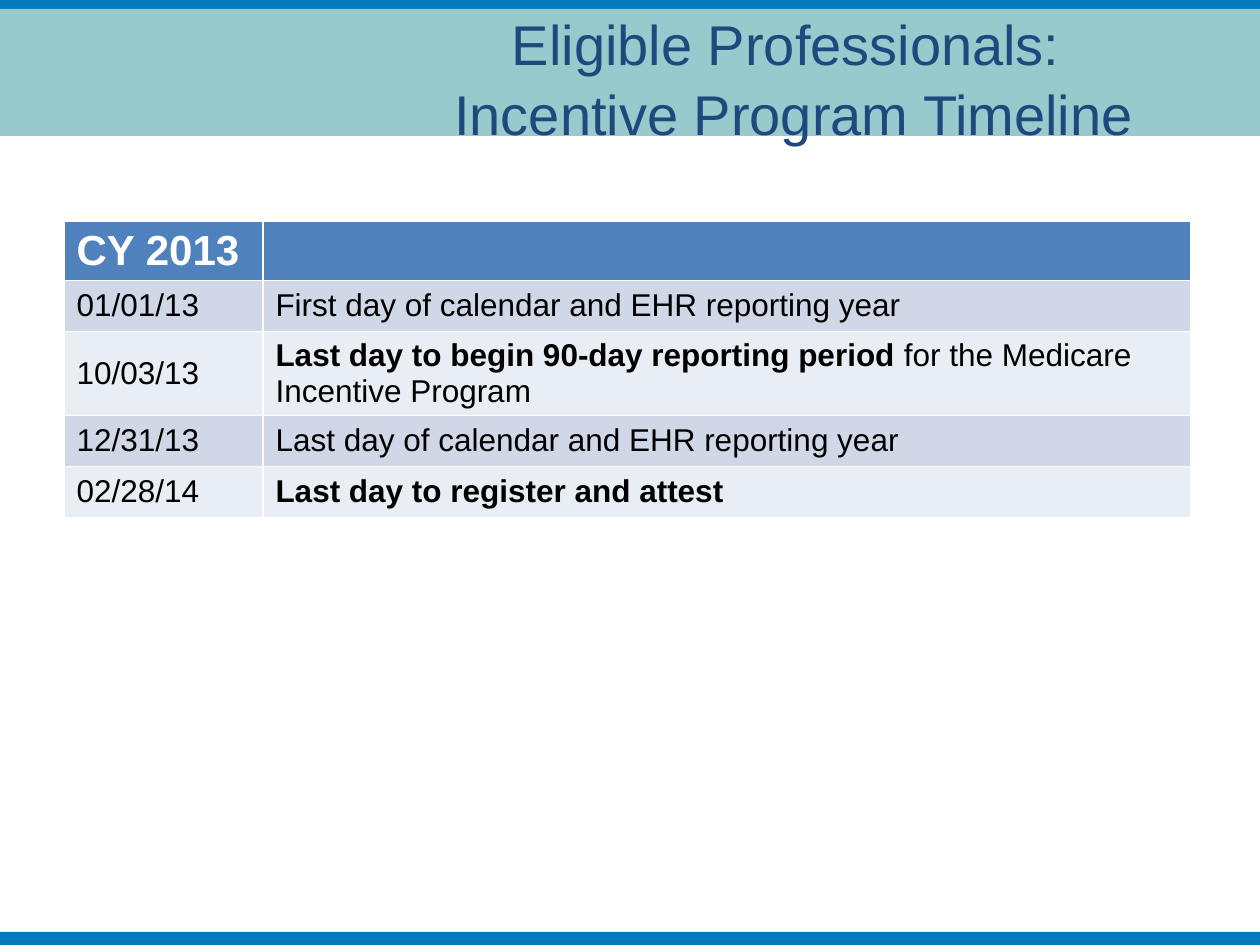
from pptx import Presentation
from pptx import util as u
from pptx.dml.color import RGBColor
from pptx.enum import shapes, text

PX = u.Inches(1) // 126
HUES = {
    "bar": "027ABB", "band": "98C9CD", "title": "1F497D", "head": "4F81BD",
    "odd": "D0D8E8", "even": "E9EDF4", "white": "FFFFFF", "black": "000000",
}


def hue(name):
    return RGBColor.from_string(HUES[name])


def write(para, words, size=18, color="black", bold=False):
    """Add text to a paragraph; a vertical tab is a line break."""
    for i, line in enumerate(words.split("\v")):
        if i:
            para.add_line_break()
        run = para.add_run()
        run.text = line
        font = run.font
        font.name, font.size, font.bold = "Arial", u.Pt(size), bold
        font.color.rgb = hue(color)


deck = Presentation()
deck.slide_width, deck.slide_height = 1260 * PX, 945 * PX
slide = deck.slides.add_slide(deck.slide_layouts[5])

# Header and footer bars
for top, high, color in [(0, 32, "bar"), (9, 127, "band"), (932, 13, "bar")]:
    bar = slide.shapes.add_shape(
        shapes.MSO_SHAPE.RECTANGLE, 0, top * PX, 1260 * PX, high * PX)
    bar.shadow.inherit = False
    bar.fill.solid()
    bar.fill.fore_color.rgb = hue(color)
    bar.line.fill.background()

# Title, brought in front of the bars
title = slide.shapes.title
title.left, title.top, title.width, title.height = (
    n * PX for n in (328, 14, 932, 125))
frame = title.text_frame
frame.word_wrap = True
frame.auto_size = text.MSO_AUTO_SIZE.NONE
frame.vertical_anchor = text.MSO_ANCHOR.MIDDLE
para = frame.paragraphs[0]
para.alignment = text.PP_ALIGN.CENTER
para.line_spacing = 1.05
write(para, "Eligible Professionals: \vIncentive Program Timeline",
      size=32, color="title")
slide.shapes._spTree.append(title._element)

# Timeline: date, bold words, plain words
dates = [
    ("01/01/13", "", "First day of calendar and EHR reporting year"),
    ("10/03/13", "Last day to begin 90-day reporting period ",
     "for the Medicare Incentive Program"),
    ("12/31/13", "", "Last day of calendar and EHR reporting year"),
    ("02/28/14", "Last day to register and attest", ""),
]
highs = [59, 51, 84, 51, 51]
table = slide.shapes.add_table(
    len(highs), 2, 64 * PX, 221 * PX, 1127 * PX, sum(highs) * PX).table
for col, wide in zip(table.columns, (199, 928)):
    col.width = wide * PX
for i, (row, high) in enumerate(zip(table.rows, highs)):
    row.height = high * PX
    for cell in row.cells:
        cell.fill.solid()
        cell.fill.fore_color.rgb = hue(
            "head" if i == 0 else "odd" if i % 2 else "even")
        if i:
            cell.vertical_anchor = text.MSO_ANCHOR.MIDDLE

write(table.cell(0, 0).text_frame.paragraphs[0], "CY 2013",
      size=24, color="white", bold=True)
for i, (date, strong, plain) in enumerate(dates, 1):
    write(table.cell(i, 0).text_frame.paragraphs[0], date)
    para = table.cell(i, 1).text_frame.paragraphs[0]
    if strong:
        write(para, strong, bold=True)
    if plain:
        write(para, plain)

deck.save("out.pptx")
